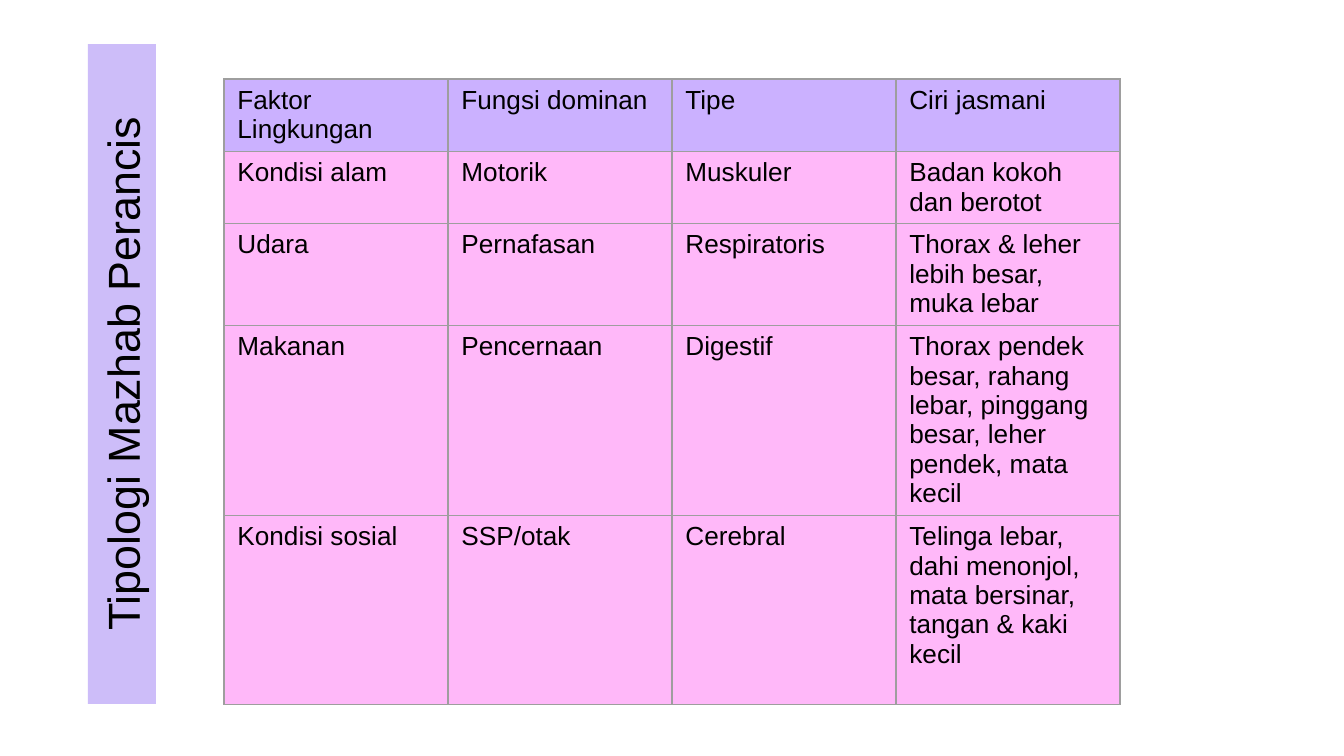
from lxml.etree import SubElement
from pptx import Presentation
from pptx.dml.color import RGBColor
from pptx.enum.shapes import MSO_SHAPE
from pptx.enum.text import MSO_ANCHOR, PP_ALIGN
from pptx.oxml.ns import qn
from pptx.util import Pt

TITLE = "Tipologi Mazhab Perancis"
ROWS = [
    ("Faktor Lingkungan", "Fungsi dominan", "Tipe", "Ciri jasmani"),
    ("Kondisi alam", "Motorik", "Muskuler", "Badan kokoh dan berotot"),
    ("Udara", "Pernafasan", "Respiratoris", "Thorax & leher lebih besar, muka lebar"),
    ("Makanan", "Pencernaan", "Digestif",
     "Thorax pendek besar, rahang lebar, pinggang besar, leher pendek, mata kecil"),
    ("Kondisi sosial", "SSP/otak", "Cerebral",
     "Telinga lebar, dahi menonjol, mata bersinar, tangan & kaki kecil"),
]
ROW_HEIGHTS = [72, 72, 102, 190, 189]
COLUMN_WIDTH = 224
TABLE_LEFT, TABLE_TOP = 224, 79
BAR_CENTER_X, BAR_CENTER_Y = 122, 374
BAR_LENGTH, BAR_THICKNESS = 660, 68
HEADER_FILL, BODY_FILL, BAR_FILL = "CBB1FF", "FFB8F9", "CDBDF9"
BORDER_COLOR, TEXT_COLOR = "9E9E9E", "000000"


def px(length):
    return round(length * 914400 / 134.4)


def color(value):
    return RGBColor.from_string(value)


def fill_shape(item, value):
    item.fill.solid()
    item.fill.fore_color.rgb = color(value)


def write(frame, text, size=14, align=PP_ALIGN.LEFT):
    frame.word_wrap = True
    para = frame.paragraphs[0]
    para.alignment = align
    span = para.add_run()
    span.text = text
    span.font.size = Pt(size)
    span.font.name = "Arial"
    span.font.color.rgb = color(TEXT_COLOR)


def add_borders(cell):
    properties = cell._tc.get_or_add_tcPr()
    for index, side in enumerate(("lnL", "lnR", "lnT", "lnB")):
        line = SubElement(properties, qn(f"a:{side}"), w=str(Pt(0.75)))
        solid = SubElement(line, qn("a:solidFill"))
        SubElement(solid, qn("a:srgbClr"), val=BORDER_COLOR)
        properties.insert(index, line)


def add_typology_table(page):
    columns = len(ROWS[0])
    table = page.shapes.add_table(
        len(ROWS), columns, px(TABLE_LEFT), px(TABLE_TOP),
        px(COLUMN_WIDTH * columns), px(sum(ROW_HEIGHTS))).table
    for column in table.columns:
        column.width = px(COLUMN_WIDTH)
    for index, (texts, height) in enumerate(zip(ROWS, ROW_HEIGHTS)):
        table.rows[index].height = px(height)
        for cell, text in zip(table.rows[index].cells, texts):
            fill_shape(cell, BODY_FILL if index else HEADER_FILL)
            add_borders(cell)
            write(cell.text_frame, text)


def add_title_bar(page):
    bar = page.shapes.add_shape(
        MSO_SHAPE.RECTANGLE,
        px(BAR_CENTER_X - BAR_LENGTH / 2), px(BAR_CENTER_Y - BAR_THICKNESS / 2),
        px(BAR_LENGTH), px(BAR_THICKNESS))
    bar.rotation = 270
    bar.shadow.inherit = False
    bar.line.fill.background()
    fill_shape(bar, BAR_FILL)
    bar.text_frame.vertical_anchor = MSO_ANCHOR.MIDDLE
    write(bar.text_frame, TITLE, size=24, align=PP_ALIGN.CENTER)


def main():
    """Build the typology slide."""
    deck = Presentation()
    deck.slide_width, deck.slide_height = px(1344), px(756)
    page = deck.slides.add_slide(deck.slide_layouts[6])
    add_typology_table(page)
    add_title_bar(page)
    deck.save("out.pptx")


if __name__ == "__main__":
    main()
